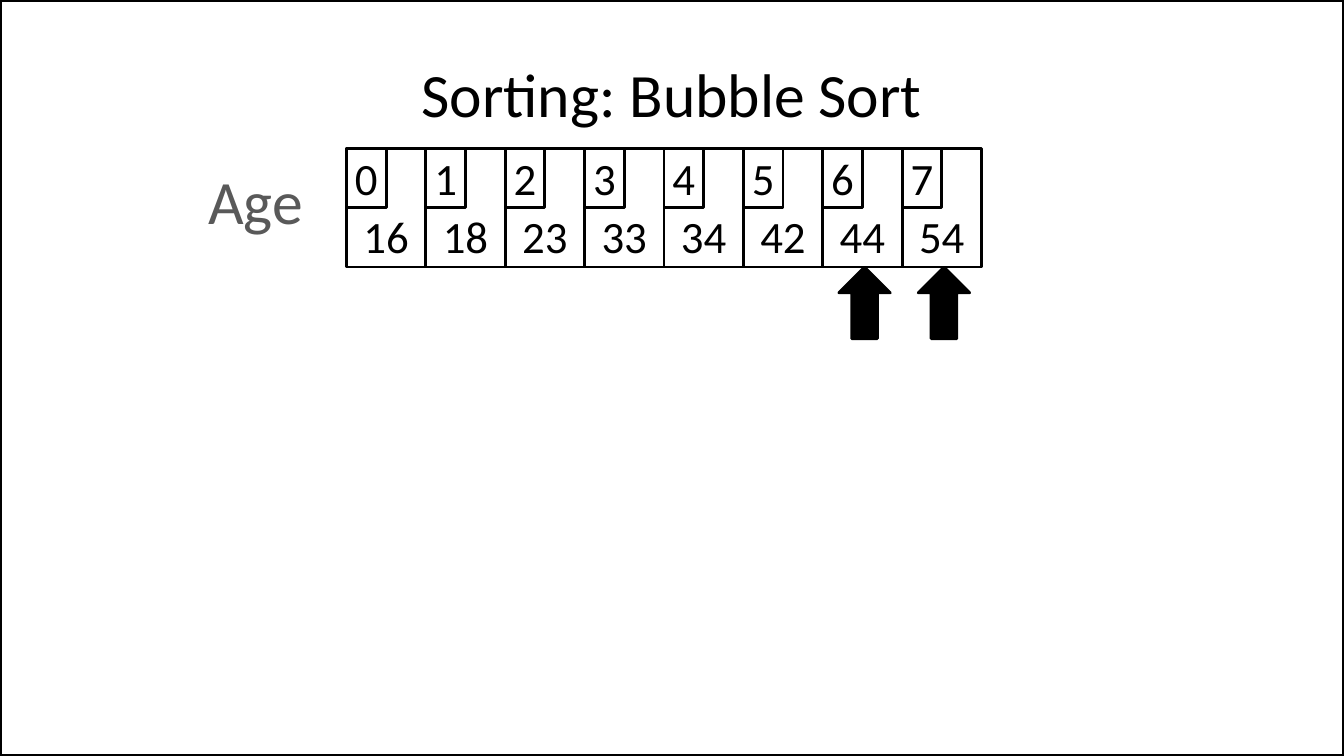
from pptx import Presentation
from pptx.dml.color import RGBColor
from pptx.enum.shapes import MSO_SHAPE as SHAPE
from pptx.enum.text import MSO_ANCHOR as ANCHOR, PP_ALIGN as ALIGN
from pptx.util import Pt

TITLE = "Sorting: Bubble Sort"
LABEL = "Age"
AGES = [16, 18, 23, 33, 34, 42, 44, 54]
COMPARED = [6, 7]

BLACK = RGBColor(0x00, 0x00, 0x00)
GRAY = RGBColor(0x59, 0x59, 0x59)
FONT = "Calibri"
SLIDE_W, SLIDE_H = 960, 540
ROW_LEFT, ROW_TOP = 247.5, 105.8
CELL_W, CELL_H = 56.7, 85
ARROW_W, ARROW_H, ARROW_INSET = 36.7, 51.1, 11.5


def place(sp, left, top, width, height):
    sp.left, sp.top, sp.width, sp.height = Pt(left), Pt(top), Pt(width), Pt(height)


def write(sp, text, size, color=BLACK, anchor=ANCHOR.MIDDLE):
    tf = sp.text_frame
    tf.text = text
    tf.vertical_anchor = anchor
    p = tf.paragraphs[0]
    p.alignment = ALIGN.CENTER
    p.font.name, p.font.size = FONT, Pt(size)
    p.font.color.rgb = color
    return tf


def add_outlined(slide, kind, left, top, width, height, line=2):
    sp = slide.shapes.add_shape(kind, Pt(left), Pt(top), Pt(width), Pt(height))
    sp.shadow.inherit = False
    sp.fill.background()
    sp.line.color.rgb = BLACK
    sp.line.width = Pt(line)
    return sp


def add_cell(slide, left, width, height, text, anchor):
    sp = add_outlined(slide, SHAPE.RECTANGLE, left, ROW_TOP, width, height)
    tf = write(sp, text, 32, anchor=anchor)
    tf.word_wrap = False
    tf.margin_left = tf.margin_right = 0


def main():
    prs = Presentation()
    prs.slide_width, prs.slide_height = Pt(SLIDE_W), Pt(SLIDE_H)
    slide = prs.slides.add_slide(prs.slide_layouts[5])

    add_outlined(slide, SHAPE.RECTANGLE, 0, 0, SLIDE_W, SLIDE_H, line=3)
    title = slide.shapes.title
    place(title, 48, 21.6, 864, 90)
    write(title, TITLE, 44)

    lefts = [ROW_LEFT + i * CELL_W for i in range(len(AGES))]
    for left, age in zip(lefts, AGES):
        add_cell(slide, left, CELL_W, CELL_H, str(age), ANCHOR.BOTTOM)
    for i, left in enumerate(lefts):
        add_cell(slide, left, CELL_W / 2, CELL_H / 2, str(i), ANCHOR.MIDDLE)

    label = slide.shapes.add_textbox(Pt(140.4), Pt(113), Pt(84.2), Pt(60.5))
    write(label, LABEL, 44, GRAY, ANCHOR.TOP).word_wrap = False

    for i in COMPARED:
        arrow = add_outlined(slide, SHAPE.UP_ARROW, lefts[i] + ARROW_INSET,
                             ROW_TOP + CELL_H, ARROW_W, ARROW_H)
        arrow.fill.solid()
        arrow.fill.fore_color.rgb = BLACK

    prs.save("out.pptx")


if __name__ == "__main__":
    main()
